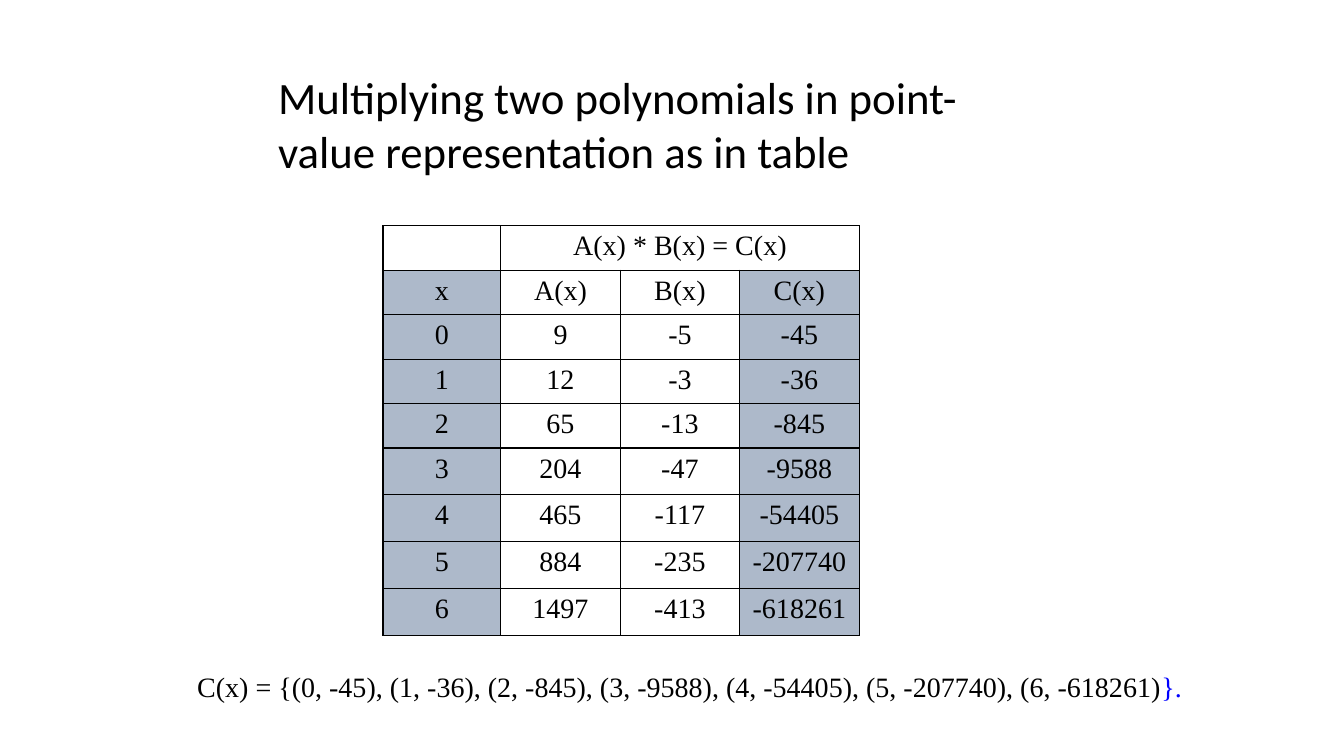
from lxml.etree import SubElement
from pptx import Presentation
from pptx.dml.color import RGBColor
from pptx.enum.text import MSO_AUTO_SIZE as AutoSize, PP_ALIGN as Align
from pptx.oxml import parse_xml
from pptx.oxml.ns import qn
from pptx.util import Cm, Pt

BLACK = RGBColor(0x00, 0x00, 0x00)
BLUE = RGBColor(0x00, 0x00, 0xFF)
WHITE = RGBColor(0xFF, 0xFF, 0xFF)
GREY_BLUE = RGBColor(0xAD, 0xB9, 0xCA)

A_VALUES = [9, 12, 65, 204, 465, 884, 1497]
B_VALUES = [-5, -3, -13, -47, -117, -235, -413]
POINTS = [(x, a, b, a * b) for x, (a, b) in enumerate(zip(A_VALUES, B_VALUES))]


class Deck:
    """Holds the text style and the current slide, and adds elements to it."""

    title_font, title_size = "Calibri", Pt(32)
    body_font, body_size = "Times New Roman", Pt(20)

    def __init__(self, prs):
        self.s = prs.slides.add_slide(prs.slide_layouts[6])

    def run(self, p, text, font=body_font, size=body_size, color=BLACK):
        r = p.add_run()
        r.text = text
        r.font.name, r.font.size = font, size
        r.font.color.rgb = color

    def textbox(self, x, y, w, h):
        tf = self.s.shapes.add_textbox(Cm(x), Cm(y), Cm(w), Cm(h)).text_frame
        tf.word_wrap = True
        tf.auto_size = AutoSize.SHAPE_TO_FIT_TEXT
        return tf.paragraphs[0]

    def title(self, text, *box):
        self.run(self.textbox(*box), text, self.title_font, self.title_size)

    def formula(self, parts, *box, indent):
        p = self.textbox(*box)
        p.line_spacing = 1.5
        p._p.get_or_add_pPr().set("indent", str(Cm(indent)))
        for text, color in parts:
            self.run(p, text, color=color)

    def cell(self, cell, text, fill):
        p = cell.text_frame.paragraphs[0]
        p.alignment = Align.CENTER
        if text:
            self.run(p, text)
        tcPr = cell._tc.get_or_add_tcPr()
        for side in ("a:lnL", "a:lnR", "a:lnT", "a:lnB"):
            ln = SubElement(tcPr, qn(side), w=str(Pt(1)))
            color = SubElement(SubElement(ln, qn("a:solidFill")), qn("a:srgbClr"))
            color.set("val", str(BLACK))
        cell.fill.solid()
        cell.fill.fore_color.rgb = fill

    def table(self, rows, x, y, widths, heights):
        frame = self.s.shapes.add_table(len(rows), len(widths), Cm(x), Cm(y),
                                        Cm(sum(widths)), Cm(sum(heights)))
        table = frame.table
        table.first_row = table.horz_banding = False
        for column, width in zip(table.columns, widths):
            column.width = Cm(width)
        for row, height in zip(table.rows, heights):
            row.height = Cm(height)
        for i, row in enumerate(rows):
            for j, value in enumerate(row):
                shaded = i > 0 and j in (0, len(widths) - 1)
                self.cell(table.cell(i, j), str(value), GREY_BLUE if shaded else WHITE)
        table.cell(0, 1).merge(table.cell(0, len(widths) - 1))


def main():
    prs = Presentation()
    prs.slide_width, prs.slide_height = Cm(33.87), Cm(19.05)
    deck = Deck(prs)
    rows = [("", "A(x) * B(x) = C(x)", "", ""), ("x", "A(x)", "B(x)", "C(x)"), *POINTS]
    deck.table(rows, 9.65, 5.69, [2.97] + [3.01] * 3, [1.12] * 5 + [1.18] * 4)
    deck.title("Multiplying two polynomials in point-value representation as in table",
               6.76, 1.63, 17.75, 3)
    pairs = ", ".join(f"({x}, {c})" for x, a, b, c in POINTS)
    deck.formula([("C(x) = {" + pairs, BLACK), ("}.", BLUE)],
                 3.45, 16.33, 26.95, 1.42, indent=1.27)
    prs.save("out.pptx")


if __name__ == "__main__":
    main()
